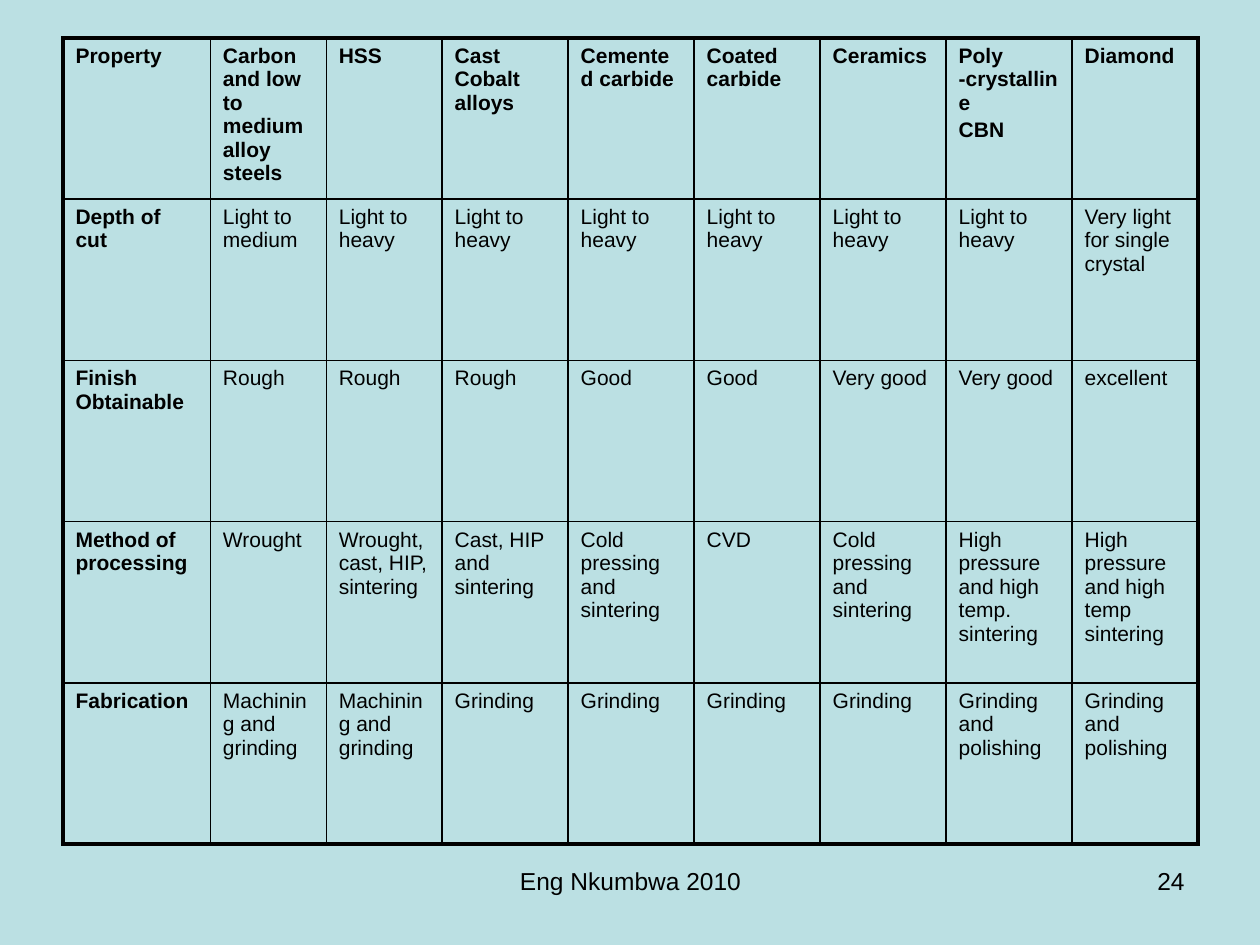
from lxml.etree import SubElement
from pptx import Presentation
from pptx.dml.color import RGBColor
from pptx.enum.text import PP_ALIGN as Align
from pptx.oxml import parse_xml
from pptx.oxml.ns import nsdecls, qn
from pptx.util import Inches, Pt

COLORS = {"background": "BBE0E3", "ink": "000000"}
COLUMNS = [1.17, 0.92, 0.92] + [1] * 6
ROW_HEIGHT = 1.28
OUTER, INNER = 2.25, 1
ROWS = [
    ["Property", "Carbon and low to medium alloy steels", "HSS", "Cast Cobalt alloys",
     "Cemented carbide", "Coated carbide", "Ceramics", "Poly -crystalline\nCBN", "Diamond"],
    ["Depth of cut", "Light to medium", *["Light to heavy"] * 6,
     "Very light for single crystal"],
    ["Finish Obtainable", *["Rough"] * 3, *["Good"] * 2, *["Very good"] * 2, "excellent"],
    ["Method of processing", "Wrought", "Wrought, cast, HIP, sintering",
     "Cast, HIP and sintering", "Cold pressing and sintering", "CVD",
     "Cold pressing and sintering", "High pressure and high temp. sintering",
     "High pressure and high temp sintering"],
    ["Fabrication", *["Machining and grinding"] * 2, *["Grinding"] * 4,
     *["Grinding and polishing"] * 2],
]


def style(para, size, bold=False):
    para.font.name = "Arial"
    para.font.size = Pt(size)
    para.font.bold = bold
    para.font.color.rgb = RGBColor.from_string(COLORS["ink"])


def add_border(cell, side, width):
    cell._tc.get_or_add_tcPr().append(parse_xml(
        f'<a:ln{side} {nsdecls("a")} w="{Pt(width)}"><a:solidFill>'
        f'<a:srgbClr val="{COLORS["ink"]}"/></a:solidFill></a:ln{side}>'))


deck = Presentation()
deck.slide_width, deck.slide_height = Inches(10), Inches(7.5)
page = deck.slides.add_slide(deck.slide_layouts[6])
page.background.fill.solid()
page.background.fill.fore_color.rgb = RGBColor.from_string(COLORS["background"])

frame = page.shapes.add_table(
    len(ROWS), len(COLUMNS), int(deck.slide_width * 0.05), int(deck.slide_height * 0.04),
    Inches(sum(COLUMNS)), Inches(ROW_HEIGHT * len(ROWS)))
table = frame.table
table.first_row = table.horz_banding = False
for column, width in zip(table.columns, COLUMNS):
    column.width = Inches(width)
for row in table.rows:
    row.height = Inches(ROW_HEIGHT)

for r, texts in enumerate(ROWS):
    for c, text in enumerate(texts):
        cell = table.cell(r, c)
        cell.text = text
        for para in cell.text_frame.paragraphs:
            style(para, 12, bold=r == 0 or c == 0)
            spacing = parse_xml(f'<a:spcBef {nsdecls("a")}/>')
            SubElement(spacing, qn("a:spcPct"), val="20000")
            para._p.get_or_add_pPr().insert(0, spacing)
        edges = {"L": c == 0, "R": c == len(COLUMNS) - 1,
                 "T": r == 0, "B": r == len(ROWS) - 1}
        for side, is_outer in edges.items():
            add_border(cell, side, OUTER if is_outer else INNER)
        cell.fill.background()

for text, left, width, align in [
    ("24", 0.717, 0.233, Align.RIGHT),
    ("Eng Nkumbwa 2010", 0.342, 0.317, Align.CENTER),
]:
    box = page.shapes.add_textbox(
        int(deck.slide_width * left), int(deck.slide_height * 0.91),
        int(deck.slide_width * width), int(deck.slide_height * 0.07))
    box.text_frame.word_wrap = True
    para = box.text_frame.paragraphs[0]
    para.text = text
    para.alignment = align
    style(para, 14)

deck.save("out.pptx")
